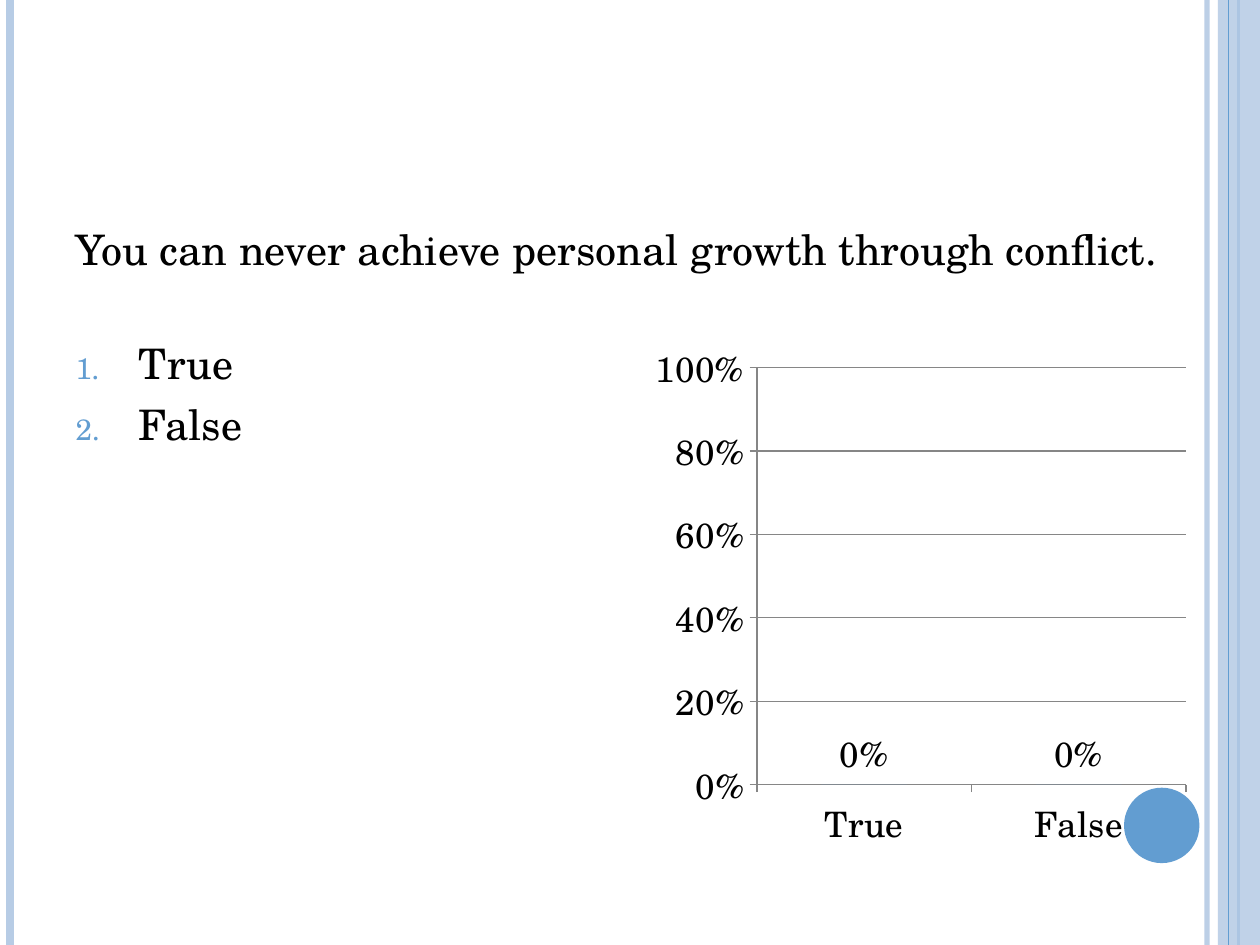
from lxml.etree import SubElement
from pptx import Presentation
from pptx.chart.data import CategoryChartData
from pptx.dml.color import RGBColor
from pptx.enum.chart import XL_CHART_TYPE, XL_LABEL_POSITION, XL_TICK_MARK
from pptx.enum.shapes import MSO_CONNECTOR, MSO_SHAPE
from pptx.enum.text import MSO_ANCHOR, MSO_AUTO_SIZE, PP_ALIGN
from pptx.oxml.ns import qn
from pptx.util import Cm, Pt

FONT = "TeX Gyre Schola"
COLORS = {"pale": "B7CCE5", "accent": "629DD1", "text": "000000", "grid": "868686"}
WIDTH, HEIGHT = 25.4, 19.05
MARGIN = 1.27
CONTENT_TOP, CONTENT_WIDTH, CONTENT_HEIGHT = 6.67, 11.13, 10.67
ANSWERS = ["True", "False"]


def color(name):
    """Return the named palette colour."""
    return RGBColor.from_string(COLORS[name])


def set_opacity(shape, percent):
    """Make the first solid colour of a shape partly transparent."""
    value = next(shape._element.spPr.iter(qn("a:srgbClr")))
    SubElement(value, qn("a:alpha"), val=str(percent * 1000))


def add_rule(page, left, width, tone, opacity=100):
    """Draw a vertical line over the full height of the page."""
    rule = page.shapes.add_connector(
        MSO_CONNECTOR.STRAIGHT, Cm(left), Cm(0), Cm(left), Cm(HEIGHT))
    rule.line.width = Pt(width)
    rule.line.color.rgb = color(tone)
    if opacity < 100:
        set_opacity(rule, opacity)
    SubElement(rule._element.spPr, qn("a:effectLst"))


def add_block(page, kind, left, top, width, height, tone, opacity=100):
    """Draw a filled shape without outline."""
    block = page.shapes.add_shape(kind, Cm(left), Cm(top), Cm(width), Cm(height))
    block.shadow.inherit = False
    block.fill.solid()
    block.fill.fore_color.rgb = color(tone)
    block.line.fill.background()
    if opacity < 100:
        set_opacity(block, opacity)


def place_body(box, left, top, width, height):
    """Move a body placeholder and return its text frame."""
    box.left, box.top, box.width, box.height = Cm(left), Cm(top), Cm(width), Cm(height)
    frame = box.text_frame
    frame.word_wrap = True
    frame.auto_size = MSO_AUTO_SIZE.NONE
    frame.vertical_anchor = MSO_ANCHOR.TOP
    return frame


def format_font(font, size):
    """Apply the deck's typeface and text colour."""
    font.name, font.size, font.bold = FONT, Pt(size), False
    font.color.rgb = color("text")


def write_text(para, text, size=24, before=6, numbered=False):
    """Write one paragraph, optionally as a numbered item."""
    span = para.add_run()
    span.text = text
    format_font(span.font, size)
    para.alignment = PP_ALIGN.LEFT
    para.space_before = Pt(before)
    properties = para._p.get_or_add_pPr()
    indent = Cm(MARGIN) if numbered else 0
    properties.set("marL", str(indent))
    properties.set("indent", str(-indent))
    if numbered:
        tint = SubElement(properties, qn("a:buClr"))
        SubElement(tint, qn("a:srgbClr"), val=COLORS["accent"])
        SubElement(properties, qn("a:buSzPct"), val="70000")
        SubElement(properties, qn("a:buFont"), typeface=FONT)
        SubElement(properties, qn("a:buAutoNum"), type="arabicPeriod")
    else:
        SubElement(properties, qn("a:buNone"))


def add_results_chart(page, left, top, width, height):
    """Add the column chart of answer shares."""
    data = CategoryChartData(number_format="0%")
    data.categories = ANSWERS
    data.add_series("Series 1", [0, 0])
    chart = page.shapes.add_chart(
        XL_CHART_TYPE.COLUMN_CLUSTERED, Cm(left), Cm(top), Cm(width), Cm(height), data).chart
    chart.has_legend = chart.has_title = False
    format_font(chart.font, 20)
    for axis in (chart.category_axis, chart.value_axis):
        axis.major_tick_mark = XL_TICK_MARK.OUTSIDE
        axis.minor_tick_mark = XL_TICK_MARK.NONE
        axis.format.line.color.rgb = color("grid")
    scale = chart.value_axis
    scale.minimum_scale, scale.maximum_scale, scale.major_unit = 0, 1, 0.2
    scale.has_major_gridlines = True
    scale.major_gridlines.format.line.color.rgb = color("grid")
    scale.tick_labels.number_format = "0%"
    scale.tick_labels.number_format_is_linked = False
    plot = chart.plots[0]
    plot.gap_width = 150
    plot.vary_by_categories = False
    fill = plot.series[0].format.fill
    fill.solid()
    fill.fore_color.rgb = color("accent")
    plot.has_data_labels = True
    labels = plot.data_labels
    labels.show_value = True
    labels.number_format = "0%"
    labels.number_format_is_linked = False
    labels.position = XL_LABEL_POSITION.OUTSIDE_END


def main():
    """Build the poll slide."""
    deck = Presentation()
    deck.slide_width, deck.slide_height = Cm(WIDTH), Cm(HEIGHT)
    page = deck.slides.add_slide(deck.slide_layouts.get_by_name("Comparison"))
    bodies = {box.placeholder_format.idx: box for box in page.placeholders}
    question, answers = bodies.pop(1), bodies.pop(2)
    for unused in bodies.values():
        unused._element.getparent().remove(unused._element)

    add_rule(page, 24.33, 3, "pale", opacity=93)
    add_rule(page, 0.21, 4.5, "pale")
    add_rule(page, 24.97, 1.5, "accent")
    add_block(page, MSO_SHAPE.RECTANGLE, 24.55, 0, 0.85, HEIGHT, "pale", opacity=87)
    add_rule(page, 24.77, 0.75, "accent")
    add_block(page, MSO_SHAPE.OVAL, 22.66, 15.88, 1.52, 1.52, "accent")

    frame = place_body(question, MARGIN, 4.37, WIDTH - 2 * MARGIN, 1.9)
    write_text(frame.paragraphs[0], "You can never achieve personal growth through conflict.")
    frame = place_body(answers, MARGIN, CONTENT_TOP, CONTENT_WIDTH, CONTENT_HEIGHT)
    for number, answer in enumerate(ANSWERS):
        para = frame.add_paragraph() if number else frame.paragraphs[0]
        write_text(para, answer, numbered=True)
    add_results_chart(page, WIDTH - MARGIN - CONTENT_WIDTH, CONTENT_TOP,
                      CONTENT_WIDTH, CONTENT_HEIGHT)
    deck.save("out.pptx")


if __name__ == "__main__":
    main()
